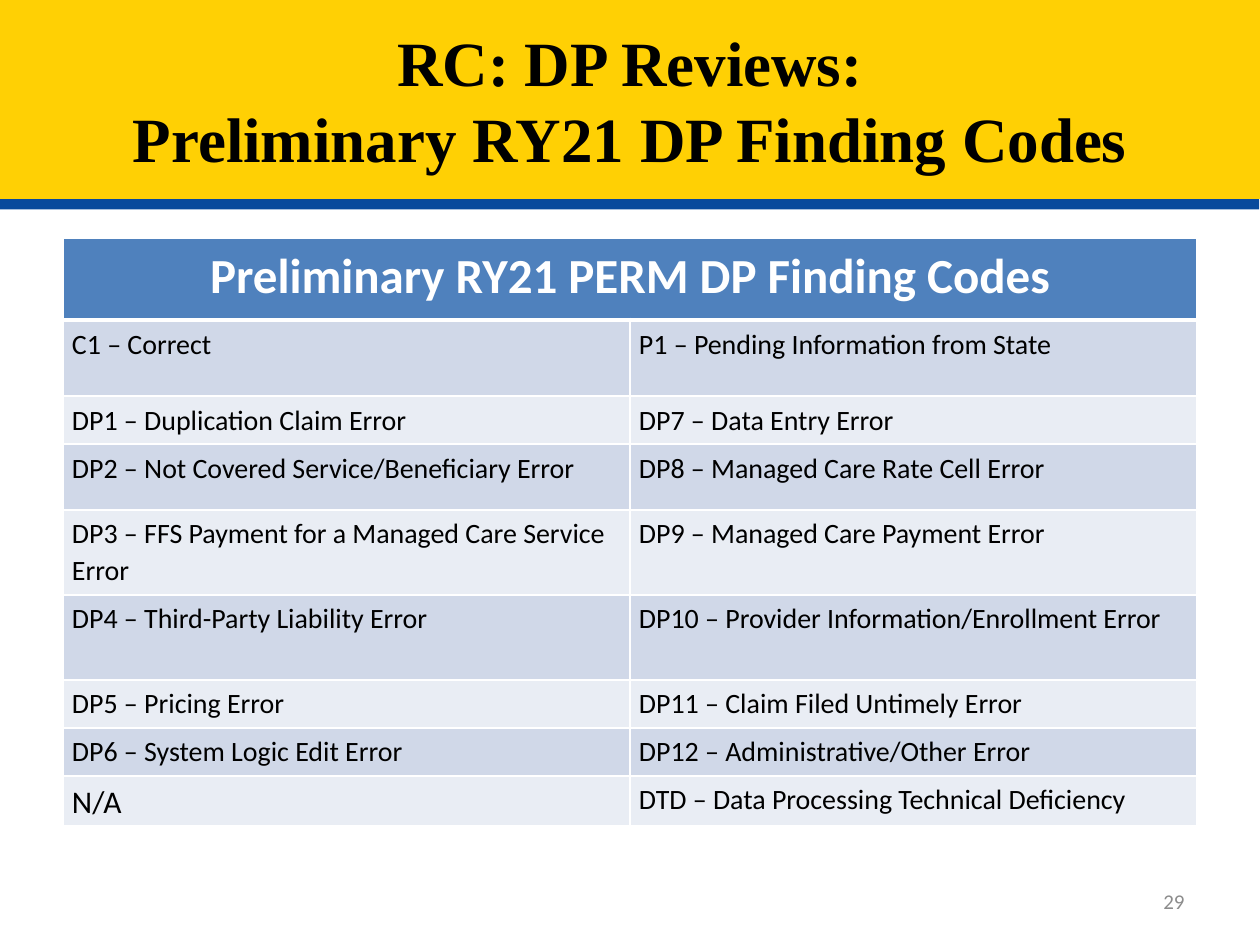
"""Build the slide of preliminary RY21 DP finding codes."""
from lxml import etree
from pptx import Presentation, util as u
from pptx.dml.color import RGBColor
from pptx.enum import shapes, text
from pptx.oxml import ns

THEME = {
    "gold": "FFD004", "blue": "084A9C", "head": "4F81BD", "bands": ("D0D8E8", "E9EDF4"),
    "black": "000000", "white": "FFFFFF", "gray": "8C8C8C",
    "serif": "Times New Roman", "sans": "Calibri",
    "title": 36, "top": 28, "body": 16, "large": 18, "page": 12,
}
CODES = [
    ("C1 – Correct", "P1 – Pending Information from State"),
    ("DP1 – Duplication Claim Error", "DP7 – Data Entry Error"),
    ("DP2 – Not Covered Service/Beneficiary Error", "DP8 – Managed Care Rate Cell Error"),
    ("DP3 – FFS Payment for a Managed Care Service Error", "DP9 – Managed Care Payment Error"),
    ("DP4 – Third-Party Liability Error", "DP10 – Provider Information/Enrollment Error"),
    ("DP5 – Pricing Error", "DP11 – Claim Filed Untimely Error"),
    ("DP6 – System Logic Edit Error", "DP12 – Administrative/Other Error"),
    ("N/A", "DTD – Data Processing Technical Deficiency"),
]
HEIGHTS = [82, 76, 48, 66, 85, 85, 48, 48, 50]
SCALE = 914400 / 126
ALIGN = text.PP_ALIGN


def px(*vals):
    return [u.Emu(round(val * SCALE)) for val in vals]


def write(frame, words, size, color, face="sans", bold=False, **form):
    para = frame.paragraphs[0]
    para.text = words
    for key, val in form.items():
        setattr(para, key, val)
    for run in para.runs:
        look = {"size": u.Pt(THEME[size]), "name": THEME[face], "bold": bold}
        for key, val in look.items():
            setattr(run.font, key, val)
        run.font.color.rgb = RGBColor.from_string(THEME[color])


deck = Presentation()
deck.slide_width, deck.slide_height = px(1260, 945)
slide = deck.slides.add_slide(deck.slide_layouts[6])

title = slide.shapes.add_shape(shapes.MSO_SHAPE.RECTANGLE, *px(0, 0, 1260, 199))
title.fill.solid()
title.fill.fore_color.rgb = RGBColor.from_string(THEME["gold"])
title.line.fill.background()
title.shadow.inherit = False
glow = title._element.spPr.find(ns.qn("a:effectLst"))
shade = etree.SubElement(glow, ns.qn("a:outerShdw"), dist=str(u.Pt(6)),
                         dir=str(94 * 60000), algn="t", rotWithShape="0")
etree.SubElement(shade, ns.qn("a:srgbClr"), val=THEME["blue"])
title.text_frame.vertical_anchor = text.MSO_ANCHOR.MIDDLE
title.text_frame.word_wrap = True
write(title.text_frame, "RC: DP Reviews:\vPreliminary RY21 DP Finding Codes",
      "title", "black", "serif", True, alignment=ALIGN.CENTER)

page = slide.shapes.add_textbox(*px(903, 876, 294, 50)).text_frame
page.word_wrap = True
page.vertical_anchor = text.MSO_ANCHOR.MIDDLE
write(page, "29", "page", "gray", alignment=ALIGN.RIGHT)

table = slide.shapes.add_table(len(HEIGHTS), 2, *px(63, 238, 1134, sum(HEIGHTS))).table
for col in table.columns:
    col.width = px(567)[0]
for row, high in zip(table.rows, px(*HEIGHTS)):
    row.height = high
table.cell(0, 0).merge(table.cell(0, 1))

rows = [("Preliminary RY21 PERM DP Finding Codes", "")] + CODES
side, edge = px(9, 5)
pads = {"margin_left": side, "margin_right": side, "margin_top": edge, "margin_bottom": edge}
for r, pair in enumerate(rows):
    for c, words in enumerate(pair):
        cell = table.cell(r, c)
        for key, val in pads.items():
            setattr(cell, key, val)
        props = cell._tc.get_or_add_tcPr()
        for tag in "LRTB":
            wide = 3 if (r, tag) in ((0, "B"), (1, "T")) else 1
            line = etree.SubElement(props, ns.qn(f"a:ln{tag}"), w=str(u.Pt(wide)))
            fill = etree.SubElement(line, ns.qn("a:solidFill"))
            etree.SubElement(fill, ns.qn("a:srgbClr"), val=THEME["white"])
        cell.fill.solid()
        tone = THEME["bands"][(r - 1) % 2] if r else THEME["head"]
        cell.fill.fore_color.rgb = RGBColor.from_string(tone)
        if r:
            size = "large" if words == "N/A" else "body"
            write(cell.text_frame, words, size, "black", line_spacing=1.07)
        elif words:
            write(cell.text_frame, words, "top", "white", bold=True,
                  alignment=ALIGN.CENTER, line_spacing=1.07)

deck.save("out.pptx")
